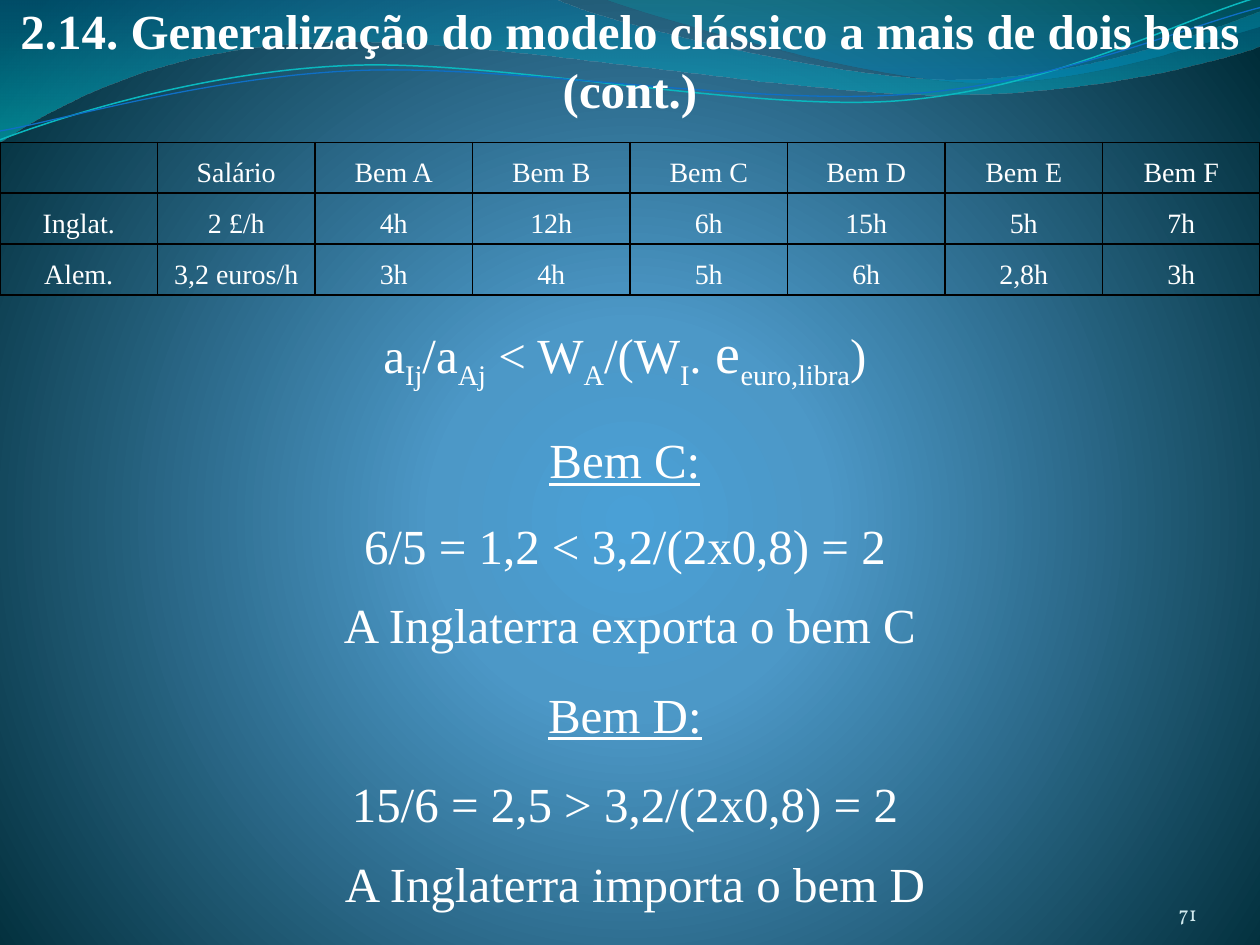
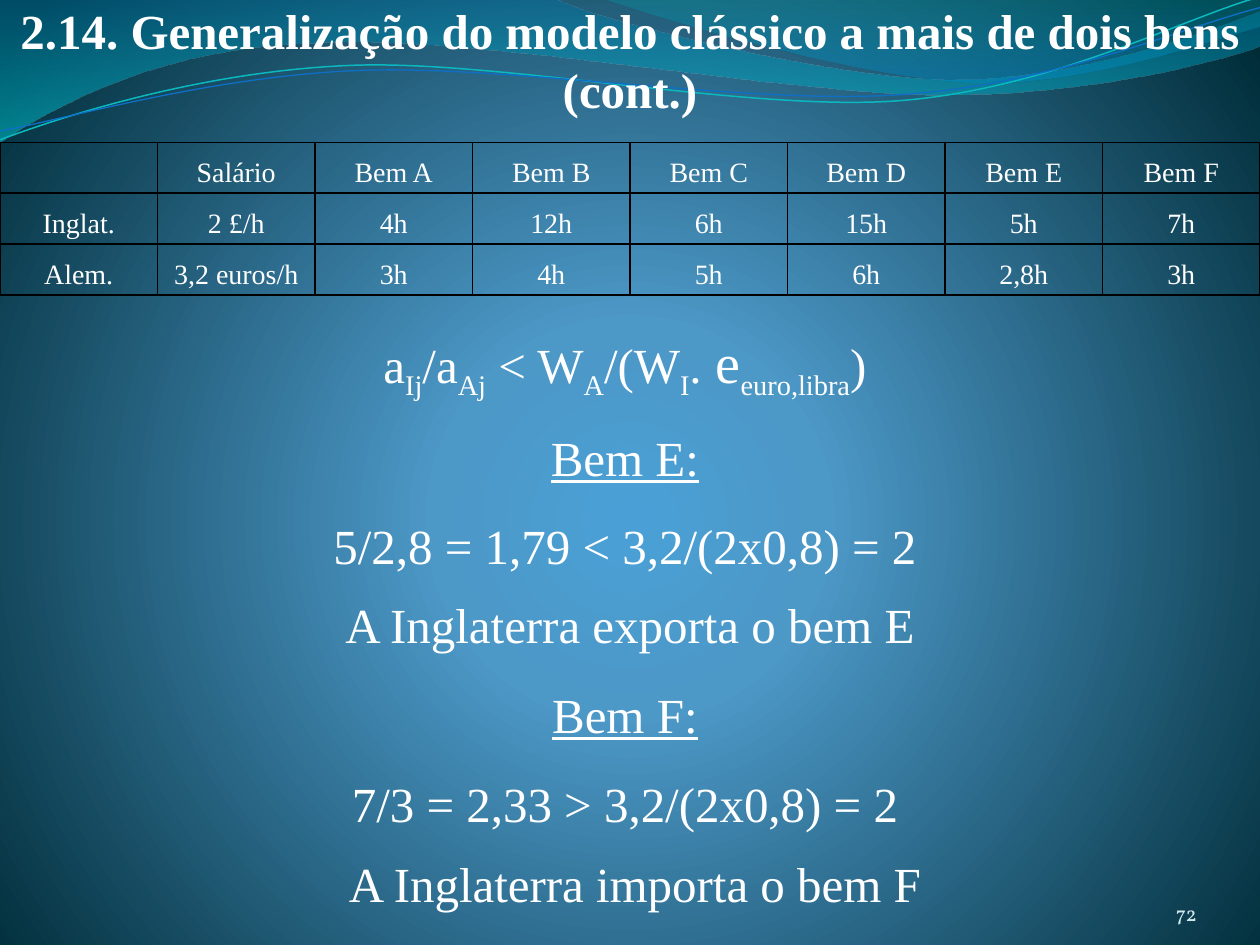
import math

from pptx import Presentation, oxml
from pptx import util as u
from pptx.dml import color
from pptx.enum import text as t
from pptx.oxml import ns

HEAD = "2.14. Generalização do modelo clássico a mais de dois bens (cont.)"
GRID = [
    ["", "Salário", "Bem A", "Bem B", "Bem C", "Bem D", "Bem E", "Bem F"],
    ["Inglat.", "2 £/h", "4h", "12h", "6h", "15h", "5h", "7h"],
    ["Alem.", "3,2 euros/h", "3h", "4h", "5h", "6h", "2,8h", "3h"],
]
RULE = [
    ("a", {}), ("Ij", {"sub": 1}), ("/a", {}), ("Aj", {"sub": 1}),
    (" < W", {}), ("A", {"sub": 1}), ("/(W", {}), ("I", {"sub": 1}),
    (".", {}), (" ", {"size": "big", "hue": "green"}), ("e", {"size": "big"}),
    ("euro,libra", {"sub": 1}), (")", {}),
]
CASES = [
    {"rule": 2.49, "top": 3.36, "goods": [
        ("C", "6/5 = 1,2 < 3,2/(2x0,8) = 2", "exporta"),
        ("D", "15/6 = 2,5 > 3,2/(2x0,8) = 2", "importa")]},
    {"rule": 2.57, "top": 3.34, "goods": [
        ("E", "5/2,8 = 1,79 < 3,2/(2x0,8) = 2", "exporta"),
        ("F", "7/3 = 2,33 > 3,2/(2x0,8) = 2", "importa")]},
]
FIRST = 71
THEME = {
    "font": "Times New Roman", "numfont": "Vollkorn",
    "white": "FFFFFF", "pale": "D1EAEE", "green": "92D050", "edge": "000000",
    "text": 28, "big": 32, "cell": 16, "num": 12,
    "back": [(0, "4AA0D6", 100), (25, "4C98C7", 100), (100, "002C38", 100)],
}
LINEAR = '<a:lin ang="5400000" scaled="1"/>'
RADIAL = ('<a:path path="circle"><a:fillToRect l="10000" t="110000" '
          'r="10000" b="100000"/></a:path>')
WAVES = [
    {"box": (-.01, -.01, 10.02, 1.14), "start": (0, 0),
     "fill": [(0, "0074A1", 45), (100, "00C6CF", 55)],
     "parts": [(4.4, -.01), (4.76, .17, 6.64, .63, 7.58, .63),
               (8.53, .63, 9.58, .26, 10, .09), (10.01, .36),
               (9.83, .44, 8.7, .76, 7.46, .75),
               (6.22, .75, 3.82, .28, 2.57, .34),
               (1.29, .36, .46, .83, -.01, 1.13), (0, 0)]},
    {"box": (4.79, -.01, 5.21, .7), "start": (4.79, -.01),
     "fill": [(0, "00A1A9", 30), (80, "008BBF", 45)],
     "parts": [(5.09, .11, 6.82, .62, 7.69, .65),
               (8.56, .69, 9.61, .32, 10, .21), (10, 0), (4.79, -.01)]},
    {"box": (-.02, .22, 10.02, .71), "start": (0, 1.11), "turn": 357.3,
     "line": ("0AB8BF", .85),
     "parts": [(.48, .93, 1.58, .57, 2.77, .52),
               (3.95, .47, 5.93, .89, 7.13, .8),
               (8.33, .71, 9.38, .15, 9.98, -.02)]},
    {"box": (-.02, .3, 10.03, .58), "start": (0, 1.04), "turn": 357.3,
     "line": ("0F6FC6", .75),
     "parts": [(.47, .96, 1.64, .61, 2.83, .56),
               (4.03, .51, 5.97, .84, 7.17, .75),
               (8.36, .67, 9.41, .21, 10, .06)]},
]


def rgb(code):
    return color.RGBColor.from_string(code)


def put(obj, **vals):
    for key, val in vals.items():
        setattr(obj, key, val)


def blend(node, fill, stops, way):
    fill.solid()
    old = next(node.iter(ns.qn("a:solidFill")))
    marks = ""
    for pos, hue, dense in stops:
        alpha = f'<a:alpha val="{dense * 1000}"/>' if dense < 100 else ""
        marks += (f'<a:gs pos="{pos * 1000}"><a:srgbClr val="{hue}">'
                  f'{alpha}</a:srgbClr></a:gs>')
    new = oxml.parse_xml(f'<a:gradFill {ns.nsdecls("a")} rotWithShape="1">'
                         f'<a:gsLst>{marks}</a:gsLst>{way}</a:gradFill>')
    old.getparent().replace(old, new)


def curve(form, data):
    left, top, width, high = data["box"]
    turn = math.radians(-data.get("turn", 0))
    cos, sin = math.cos(turn), math.sin(turn)

    def spot(x, y):
        x, y = x - left - width / 2, y - top - high / 2
        across = x * cos - y * sin + width / 2
        down = x * sin + y * cos + high / 2
        return f'<a:pt x="{u.Inches(across)}" y="{u.Inches(down)}"/>'

    def step(tag, nums):
        pts = "".join(spot(*pair) for pair in zip(nums[::2], nums[1::2]))
        return f"<a:{tag}>{pts}</a:{tag}>"

    marks = step("moveTo", data["start"])
    for part in data["parts"]:
        marks += step("lnTo" if len(part) == 2 else "cubicBezTo", part)
    marks += "<a:close/>" if "fill" in data else ""
    old = next(form._element.iter(ns.qn("a:path")))
    old.getparent().replace(old, oxml.parse_xml(
        f'<a:path {ns.nsdecls("a")} w="{form.width}" h="{form.height}">'
        f'{marks}</a:path>'))
    form.rotation = data.get("turn", 0)


def wave(slide, data, num):
    left, top, width, high = map(u.Inches, data["box"])
    pen = slide.shapes.build_freeform(left, top, scale=1.0)
    pen.add_line_segments([(left + width, top + high)], close=False)
    form = pen.convert_to_shape()
    curve(form, data)
    form.shadow.inherit = False
    if "fill" in data:
        blend(form._element, form.fill, data["fill"], LINEAR)
        form.line.fill.background()
    else:
        form.fill.background()
        hue, thick = data["line"]
        form.line.color.rgb = rgb(hue)
        form.line.width = u.Pt(thick)
    form._element.nvSpPr.cNvPr.set("id", str(20 + num))
    slide.slide_layout.shapes._spTree.append(form._element)


def style(font, size="text", hue="white", face="font", **more):
    put(font, name=THEME[face], size=u.Pt(THEME[size]), **more)
    font.color.rgb = rgb(THEME[hue])


def place(box, left, top, width, high, anchor=t.MSO_ANCHOR.MIDDLE):
    put(box, left=u.Inches(left), top=u.Inches(top),
        width=u.Inches(width), height=u.Inches(high))
    put(box.text_frame, word_wrap=True, auto_size=t.MSO_AUTO_SIZE.NONE,
        vertical_anchor=anchor)
    para = box.text_frame.paragraphs[0]
    para.alignment = t.PP_ALIGN.CENTER
    return para


def write(para, words, sub=0, **look):
    run = para.add_run()
    run.text = words
    style(run.font, **look)
    if sub:
        run.font._element.set("baseline", "-25000")


def line(slide, left, top, runs, high=.57):
    box = slide.shapes.add_textbox(0, 0, 0, 0)
    para = place(box, left, top, 10, high)
    box.text_frame.auto_size = t.MSO_AUTO_SIZE.SHAPE_TO_FIT_TEXT
    for words, look in runs:
        write(para, words, **look)


def border(cell):
    for side in "LRTB":
        cell._tc.get_or_add_tcPr().append(oxml.parse_xml(
            f'<a:ln{side} {ns.nsdecls("a")} w="12700"><a:solidFill>'
            f'<a:srgbClr val="{THEME["edge"]}"/></a:solidFill></a:ln{side}>'))


def table(slide):
    rows, cols = len(GRID), len(GRID[0])
    grid = slide.shapes.add_table(rows, cols, 0, u.Inches(1.13),
                                  u.Inches(10), u.Inches(1.21)).table
    put(grid, first_row=False, horz_banding=False)
    for r, row in enumerate(GRID):
        for c, words in enumerate(row):
            cell = grid.cell(r, c)
            border(cell)
            cell.fill.background()
            put(cell, margin_left=u.Inches(.07), margin_right=u.Inches(.07),
                margin_top=0, margin_bottom=0)
            para = cell.text_frame.paragraphs[0]
            if words:
                put(para, alignment=t.PP_ALIGN.CENTER, line_spacing=1.5,
                    space_before=u.Pt(6), space_after=u.Pt(6))
                write(para, words, size="cell")
            else:
                para.font.size = u.Pt(THEME["cell"])


def number(slide, num):
    box = slide.shapes.add_textbox(0, 0, 0, 0)
    para = place(box, 8.67, 6.95, .83, .4, t.MSO_ANCHOR.BOTTOM)
    para.alignment = t.PP_ALIGN.RIGHT
    put(box.text_frame, margin_left=0, margin_right=0,
        margin_top=0, margin_bottom=0)
    write(para, str(num), size="num", hue="pale", face="numfont")
    run = para.runs[0]._r
    field = oxml.parse_xml(
        f'<a:fld {ns.nsdecls("a")} type="slidenum" '
        'id="{B6F15528-21DE-4FAA-801E-634DDDAF4B2B}"/>')
    run.getparent().replace(run, field)
    field.extend(list(run))


def build(slide, case, num):
    write(place(slide.shapes.title, .02, -.05, 9.96, 1.04), HEAD, bold=True)
    table(slide)
    line(slide, -.04, case["rule"], RULE, .64)
    tops = [(case["top"], 4.04, 4.67), (5.38, 6.09, 6.72)]
    for (good, sums, verb), (top, mid, low), left in zip(
            case["goods"], tops, (0, .04)):
        line(slide, -.04, top, [(f"Bem {good}:", {"underline": True})])
        line(slide, -.04, mid, [(sums, {})])
        line(slide, left, low, [(f"A Inglaterra {verb} o bem {good}", {})])
    number(slide, num)


def main():
    deck = Presentation()
    put(deck, slide_width=u.Inches(10), slide_height=u.Inches(7.5))
    deck.element.set("firstSlideNum", str(FIRST))
    base = deck.slide_master
    blend(base.element, base.background.fill, THEME["back"], RADIAL)
    slides = [deck.slides.add_slide(deck.slide_layouts[5]) for _ in CASES]
    for num, data in enumerate(WAVES):
        wave(slides[0], data, num)
    for num, (slide, case) in enumerate(zip(slides, CASES), FIRST):
        build(slide, case, num)
    deck.save("out.pptx")


if __name__ == "__main__":
    main()
